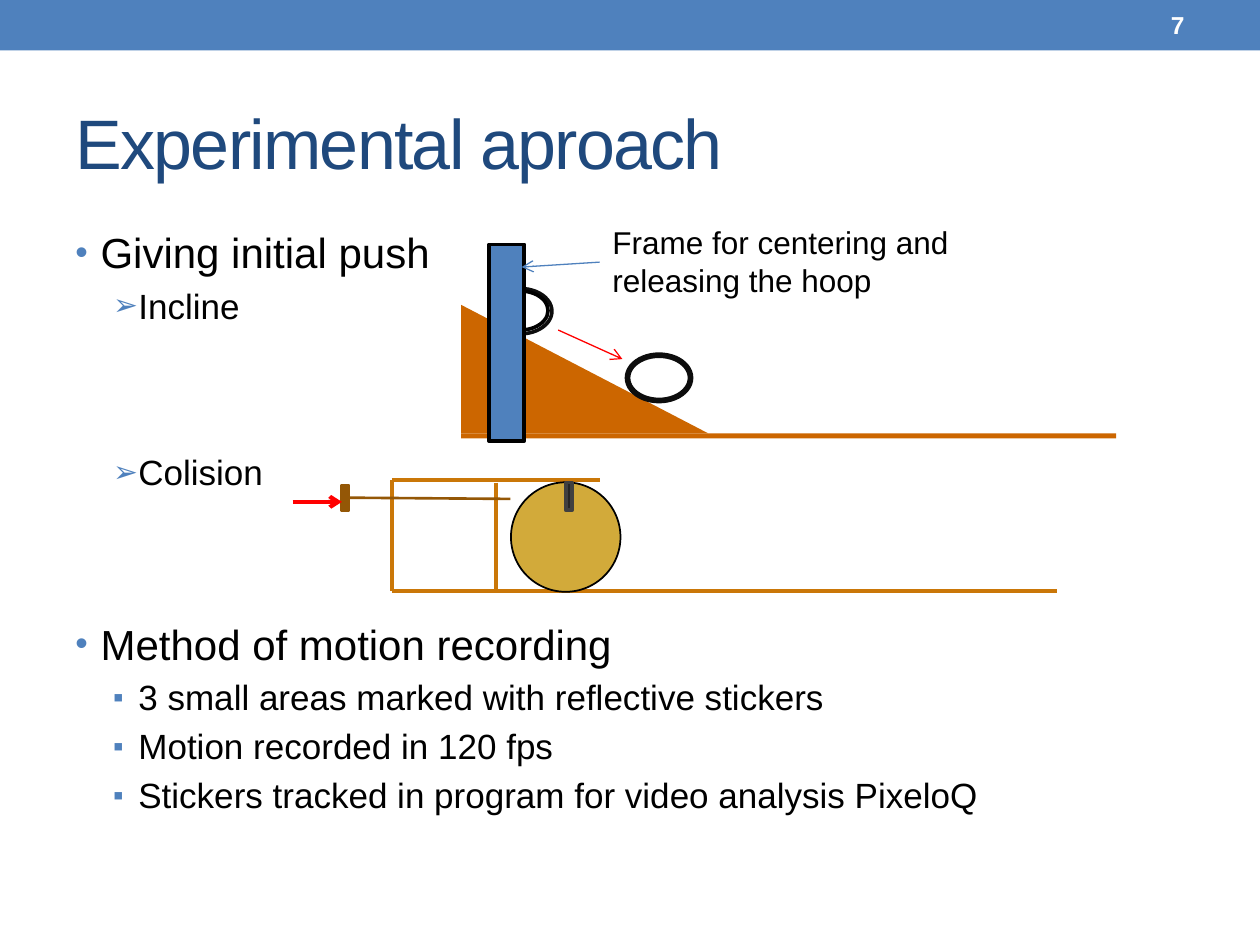
from lxml.etree import SubElement
from pptx import Presentation
from pptx.dml.color import RGBColor
from pptx.enum.shapes import MSO_CONNECTOR, MSO_SHAPE
from pptx.enum.text import MSO_ANCHOR, PP_ALIGN
from pptx.oxml.ns import qn
from pptx.util import Pt

BLUE, BLACK, WHITE, RED = "4F81BD", "000000", "FFFFFF", "FF0000"
ORANGE, WOOD, BROWN = "CC6600", "CA7708", "945706"
RECT, OVAL, WEDGE = MSO_SHAPE.RECTANGLE, MSO_SHAPE.OVAL, MSO_SHAPE.RIGHT_TRIANGLE

TITLE = "Experimental aproach"
CAPTION = "Frame for centering and releasing the hoop"
SLIDE_NUMBER = "7"

LEVELS = [dict(size=24, left=14.4), dict(size=20, left=36)]
BODY = [
    (0, "•", 0, "Giving initial push"),
    (1, "➢", 4, "Incline"),
    (1, "➢", 71.2, "Colision"),
    (0, "•", 71.8, "Method of motion recording"),
    (1, "▪", 4, "3 small areas marked with reflective stickers"),
    (1, "▪", 4, "Motion recorded in 120 fps"),
    (1, "▪", 4, "Stickers tracked in program for video analysis PixeloQ"),
]

INCLINE_SHAPES = [
    (OVAL, (279.4, 164.9, 36, 25.9), WHITE, "0D0D0D", 2.08),
    (OVAL, (281.5, 166.3, 31.7, 22.3), WHITE, BLACK, 2.08),
    (WEDGE, (263.5, 174.2, 141.1, 73.4), ORANGE, None, 0),
    (RECT, (263.5, 247.7, 374.4, 2.9), ORANGE, None, 0),
    (RECT, (279.4, 139.7, 20.2, 112.3), BLUE, BLACK, 2.08),
    (OVAL, (358.6, 203, 36, 25.9), WHITE, "0D0D0D", 3.25),
]
INCLINE_ARROWS = [
    ((319, 188.6, 355.7, 205.2), RED, 0.75, True),
    ((342.7, 149.8, 298.1, 152.6), BLUE, 0.75, True),
]

LEFT, TOP, FLOOR = 224, 274.3, 337.7
STAND_LINES = [
    ((LEFT, FLOOR, LEFT, TOP), WOOD, 2, False),
    ((LEFT, FLOOR, 604.1, FLOOR), WOOD, 2, False),
    ((LEFT, TOP, 342.7, TOP), WOOD, 2, False),
    ((283.5, 275.8, 283.5, FLOOR), WOOD, 2, False),
    ((195.8, 284.4, 291.6, 285.1), BROWN, 1.5, False),
]
STAND_SHAPES = [
    (RECT, (195.4, 277.4, 3.6, 14.4), BROWN, BROWN, 2.08),
    (OVAL, (292, 275.6, 62.6, 62.6), "D2AA3A", BLACK, 1),
    (RECT, (323.3, 275.8, 3.6, 15.8), "262626", "404040", 2.08),
]
PUSH_ARROW = [((167.3, 286.8, 195.4, 286.8), RED, 2.25, True)]


def rgb(value):
    return RGBColor.from_string(value)


def points(values):
    return [Pt(v) for v in values]


def add_shapes(shapes, rows):
    for kind, box, fill, line, width in rows:
        sp = shapes.add_shape(kind, *points(box))
        sp.shadow.inherit = False
        sp.fill.solid()
        sp.fill.fore_color.rgb = rgb(fill)
        if line:
            sp.line.color.rgb = rgb(line)
            sp.line.width = Pt(width)
        else:
            sp.line.fill.background()


def add_lines(shapes, rows):
    for ends, color, width, arrow in rows:
        c = shapes.add_connector(MSO_CONNECTOR.STRAIGHT, *points(ends))
        c.line.color.rgb = rgb(color)
        c.line.width = Pt(width)
        if arrow:
            SubElement(c.line._get_or_add_ln(), qn("a:tailEnd"), type="arrow")
        SubElement(c._element.spPr, qn("a:effectLst"))


def write(p, text, size, color=BLACK, bold=False):
    r = p.add_run()
    r.text = text
    for name, value in dict(name="Arial", size=Pt(size), bold=bold).items():
        setattr(r.font, name, value)
    r.font.color.rgb = rgb(color)
    return r


def add_text_frame(shapes, box, **settings):
    tf = shapes.add_textbox(*points(box)).text_frame
    for name, value in dict(word_wrap=True, **settings).items():
        setattr(tf, name, value)
    return tf


def add_bullet(p, char, left):
    pPr = p._p.get_or_add_pPr()
    pPr.set("marL", str(Pt(left)))
    pPr.set("indent", str(-Pt(14.4)))
    SubElement(SubElement(pPr, qn("a:buClr")), qn("a:srgbClr"), val=BLUE)
    SubElement(pPr, qn("a:buSzPct"), val="85000")
    SubElement(pPr, qn("a:buFont"), typeface="Arial")
    SubElement(pPr, qn("a:buChar"), char=char)


def add_title(s):
    title = s.shapes.title
    title.left, title.top, title.width, title.height = points((36, 41.8, 648, 77.8))
    tf = title.text_frame
    tf.vertical_anchor = MSO_ANCHOR.MIDDLE
    p = tf.paragraphs[0]
    p.alignment = PP_ALIGN.LEFT
    r = write(p, TITLE, 40, "1F497D")
    r.font._element.set("spc", "-100")


def add_body(s):
    tf = add_text_frame(s.shapes, (36, 126, 648, 383.8), margin_top=Pt(3.6))
    for i, (level, char, gap, text) in enumerate(BODY):
        p = tf.add_paragraph() if i else tf.paragraphs[0]
        p.level = level
        p.space_before = Pt(gap)
        add_bullet(p, char, LEVELS[level]["left"])
        write(p, text, LEVELS[level]["size"])


def main():
    prs = Presentation()
    prs.slide_width, prs.slide_height = Pt(720), Pt(540)
    s = prs.slides.add_slide(prs.slide_layouts[5])

    add_shapes(s.shapes, [(RECT, (0, 0, 720, 28.8), BLUE, None, 0)])
    add_title(s)
    add_body(s)

    incline = s.shapes.add_group_shape().shapes
    add_shapes(incline, INCLINE_SHAPES)
    add_lines(incline, INCLINE_ARROWS)
    tf = add_text_frame(incline, (342.9, 124, 249.1, 51.1))
    write(tf.paragraphs[0], CAPTION, 18)

    collision = s.shapes.add_group_shape().shapes
    add_lines(collision, STAND_LINES)
    add_shapes(collision, STAND_SHAPES)
    add_lines(collision, PUSH_ARROW)

    tf = add_text_frame(s.shapes, (599.8, 1.4, 84.2, 25.9),
                        vertical_anchor=MSO_ANCHOR.MIDDLE)
    p = tf.paragraphs[0]
    p.alignment = PP_ALIGN.RIGHT
    write(p, SLIDE_NUMBER, 14, WHITE, bold=True)

    prs.save("out.pptx")


if __name__ == "__main__":
    main()
